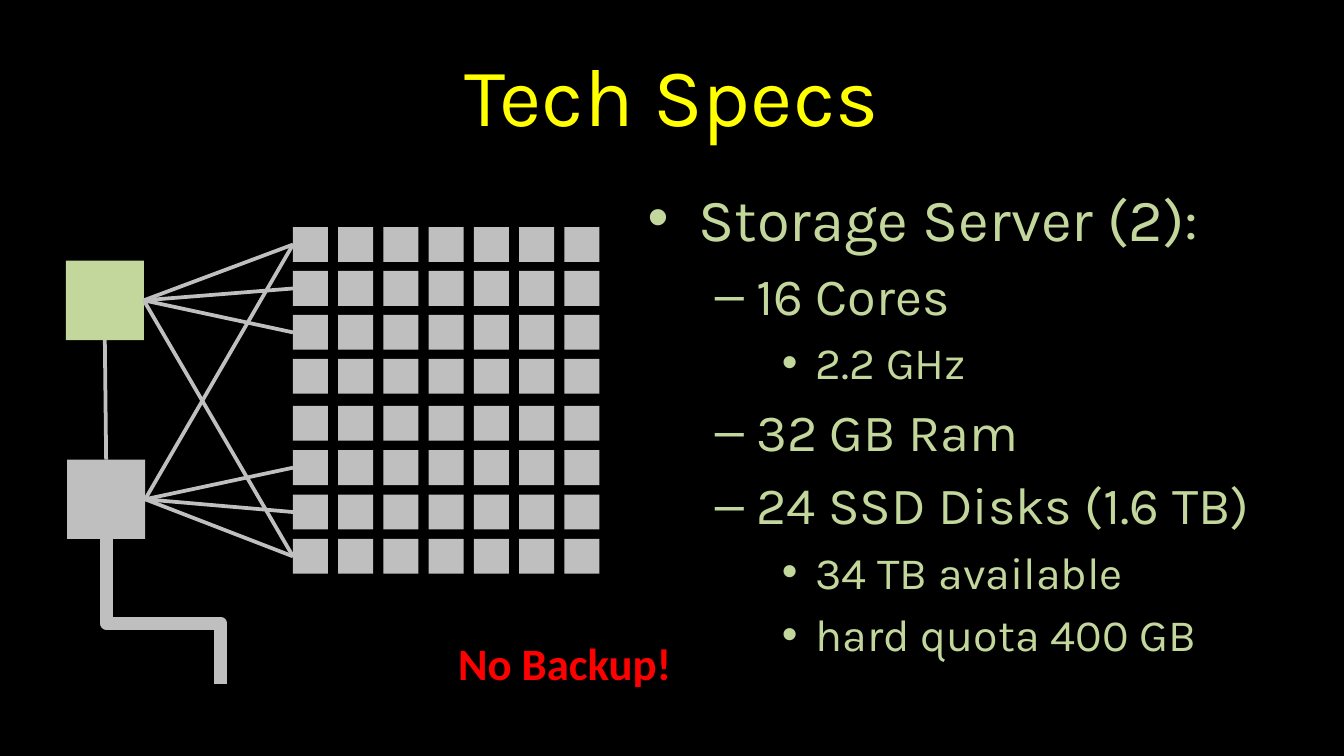
from lxml import etree
from pptx import Presentation
from pptx.dml.color import RGBColor
from pptx.enum import shapes, text
from pptx.oxml import ns
from pptx.util import Inches, Pt

BLACK = RGBColor(0x00, 0x00, 0x00)
YELLOW = RGBColor(0xFF, 0xFF, 0x00)
GREEN = RGBColor(0xC3, 0xD6, 0x9B)
GREY = RGBColor(0xBF, 0xBF, 0xBF)
RED = RGBColor(0xFF, 0x00, 0x00)

TITLE = "Tech Specs"
SPECS = [
    (0, "Storage Server (2):"),
    (1, "16 Cores"),
    (2, "2.2 GHz"),
    (1, "32 GB Ram"),
    (1, "24 SSD Disks (1.6 TB)"),
    (2, "34 TB available"),
    (2, "hard quota 400 GB"),
]
WARNING = "No Backup!"
# level: (size, left margin, hanging indent, bullet)
LEVELS = {0: (32, 0.38, 0.38, "•"), 1: (28, 0.81, 0.31, "–"), 2: (24, 1.25, 0.25, "•")}

# Compute nodes: seven columns, two blocks of four rows
NODE = 0.26
COLS, BLOCK_ROWS = 7, 4
COL_FIRST, COL_LAST = 2.18, 4.2
BLOCKS = [(1.69, 2.67), (3.02, 4.01)]

# Storage servers: left, top, colour, node rows they are wired to
SERVER_W, SERVER_H = 0.58, 0.59
SERVERS = [(0.49, 1.94, GREEN, (0, 1, 2, 7)), (0.5, 3.42, GREY, (0, 5, 6, 7))]
UPLINK_END = (1.64, 5.09)
UPLINK_BEND = 0.58


def spread(first, last, count):
    """Evenly spaced positions from first to last."""
    return [first + (last - first) * i / (count - 1) for i in range(count)]


def add_square(s, x, y, w, h, color):
    sp = s.shapes.add_shape(shapes.MSO_SHAPE.RECTANGLE, Inches(x), Inches(y), Inches(w), Inches(h))
    sp.shadow.inherit = False
    sp.fill.solid()
    sp.fill.fore_color.rgb = color
    sp.line.fill.background()


def add_line(s, start, end, width=2, kind=shapes.MSO_CONNECTOR.STRAIGHT):
    line = s.shapes.add_connector(kind, *(Inches(v) for v in (*start, *end)))
    line.line.color.rgb = GREY
    line.line.width = Pt(width)
    etree.SubElement(line._element.spPr, ns.qn("a:effectLst"))
    return line


def add_uplink(s, start, end):
    """Elbow that leaves downwards, so its frame is turned and mirrored."""
    line = add_line(s, start, end, 7, shapes.MSO_CONNECTOR.ELBOW)
    dx, dy = end[0] - start[0], end[1] - start[1]
    line.left = Inches((start[0] + end[0] - dy) / 2)
    line.top = Inches((start[1] + end[1] - dx) / 2)
    line.width, line.height = Inches(dy), Inches(dx)
    xfrm = line._element.spPr.find(ns.qn("a:xfrm"))
    xfrm.set("rot", str(270 * 60000))
    xfrm.set("flipH", "1")
    guides = line._element.spPr.find(ns.qn("a:prstGeom")).find(ns.qn("a:avLst"))
    etree.SubElement(guides, ns.qn("a:gd"), name="adj1", fmla=f"val {round(UPLINK_BEND * 100000)}")


def add_run(p, words, size, font, color, bold=False):
    r = p.add_run()
    r.text = words
    r.font.size, r.font.name, r.font.bold = Pt(size), font, bold
    r.font.color.rgb = color


def add_textbox(s, x, y, w, h):
    tf = s.shapes.add_textbox(Inches(x), Inches(y), Inches(w), Inches(h)).text_frame
    tf.word_wrap = True
    return tf


def set_bullet(p, margin, hang, char):
    pPr = p._p.get_or_add_pPr()
    pPr.set("marL", str(Inches(margin)))
    pPr.set("indent", str(-Inches(hang)))
    before = etree.SubElement(pPr, ns.qn("a:spcBef"))
    etree.SubElement(before, ns.qn("a:spcPct"), val="20000")
    etree.SubElement(pPr, ns.qn("a:buFont"), typeface="Arial")
    etree.SubElement(pPr, ns.qn("a:buChar"), char=char)


def add_title(s):
    title = s.shapes.title
    title.left, title.top = Inches(0.5), Inches(0.23)
    title.width, title.height = Inches(9), Inches(0.94)
    tf = title.text_frame
    tf.auto_size = text.MSO_AUTO_SIZE.NONE
    tf.vertical_anchor = text.MSO_ANCHOR.MIDDLE
    p = tf.paragraphs[0]
    p.alignment = text.PP_ALIGN.CENTER
    add_run(p, TITLE, 44, "Karla", YELLOW)


def add_specs(s):
    tf = add_textbox(s, 4.72, 1.3, 5, 3.96)
    for i, (level, words) in enumerate(SPECS):
        p = tf.add_paragraph() if i else tf.paragraphs[0]
        p.level = level
        size, margin, hang, char = LEVELS[level]
        set_bullet(p, margin, hang, char)
        add_run(p, words, size, "Karla", GREEN)


def add_cluster(s):
    rows = [y for block in BLOCKS for y in spread(*block, BLOCK_ROWS)]
    for y in rows:
        for x in spread(COL_FIRST, COL_LAST, COLS):
            add_square(s, x, y, NODE, NODE, GREY)

    for x, y, color, wired in SERVERS:
        add_square(s, x, y, SERVER_W, SERVER_H, color)
        for row in wired:
            add_line(s, (x + SERVER_W, y + SERVER_H / 2), (COL_FIRST, rows[row] + NODE / 2))

    (x1, y1, *_), (x2, y2, *_) = SERVERS
    mid = SERVER_W / 2
    add_line(s, (x1 + mid, y1 + SERVER_H), (x2 + mid, y2))
    add_uplink(s, (x2 + mid, y2 + SERVER_H), UPLINK_END)


def main():
    prs = Presentation()
    prs.slide_width = Inches(10)
    prs.slide_height = prs.slide_width * 9 // 16
    s = prs.slides.add_slide(prs.slide_layouts[5])
    s.background.fill.solid()
    s.background.fill.fore_color.rgb = BLACK
    add_title(s)
    add_specs(s)
    add_cluster(s)
    tf = add_textbox(s, 3.31, 4.68, 1.83, 0.5)
    add_run(tf.paragraphs[0], WARNING, 24, "Calibri", RED, bold=True)
    prs.save("out.pptx")


if __name__ == "__main__":
    main()
